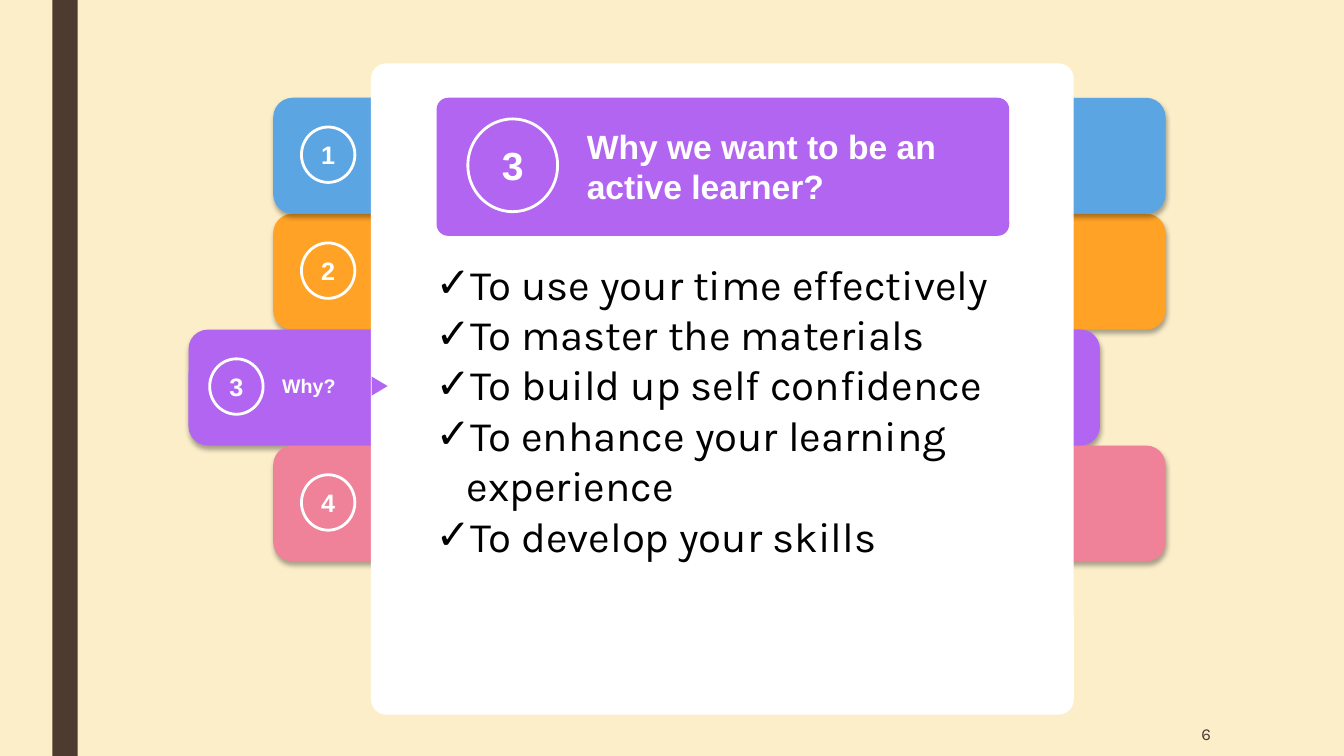
from lxml.etree import SubElement as Sub
from pptx import Presentation
from pptx.dml.color import RGBColor
from pptx.enum.shapes import MSO_SHAPE as Kind
from pptx.enum.text import MSO_ANCHOR as Anchor, MSO_AUTO_SIZE as Auto, PP_ALIGN as Align
from pptx.oxml.ns import qn
from pptx.util import Inches, Pt

BROWN, CREAM, WHITE, BLACK, PURPLE = "4E3B30", "FBEEC9", "FFFFFF", "000000", "B265F1"
TITLE = "Why we want to be an active learner?"
REASONS = [
    "To use your time effectively",
    "To master the materials",
    "To build up self confidence",
    "To enhance your learning experience",
    "To develop your skills",
]
# number: (left, width, badge left, colour), from back to front
TABS = {
    2: (2.71, 8.85, 2.99, "FFA225"),
    3: (1.87, 9.04, 2.08, PURPLE),
    4: (2.71, 8.85, 2.99, "EF8199"),
    1: (2.71, 8.85, 2.99, "5BA5E3"),
}
TOP, STEP = 0.97, 1.15
LABEL = {"name": "Arial", "bold": True}


def color(code):
    return RGBColor.from_string(code)


def place(shape, box):
    for side, size in zip(("left", "top", "width", "height"), box):
        setattr(shape, side, Inches(size))


def draw(kind, box, fill=None, line=None, adjust=None):
    shape = slide.shapes.add_shape(kind, *map(Inches, box))
    shape.shadow.inherit = False
    if fill:
        shape.fill.solid()
        shape.fill.fore_color.rgb = color(fill)
    else:
        shape.fill.background()
    if line:
        shape.line.color.rgb = color(line)
        shape.line.width = Pt(2)
    else:
        shape.line.fill.background()
    if adjust:
        shape.adjustments[0] = adjust
    return shape


def cast(shape):
    """Give a shape a soft shadow straight below it."""
    effects = shape.element.spPr.find(qn("a:effectLst"))
    outer = Sub(effects, qn("a:outerShdw"), blurRad=str(Pt(3.5)), dist=str(Pt(2.2)),
                dir="5400000", algn="t", rotWithShape="0")
    tint = Sub(outer, qn("a:srgbClr"), val=BLACK)
    Sub(tint, qn("a:alpha"), val="32000")


def write(shape, lines, size, ink, align=Align.LEFT, mark=None, **style):
    frame = shape.text_frame
    frame.word_wrap = True
    frame.auto_size = Auto.NONE
    frame.vertical_anchor = Anchor.MIDDLE
    frame.text = "\n".join(lines)
    for para in frame.paragraphs:
        if mark:
            add_mark(para, mark)
        para.alignment = align
        para.space_before = Pt(0)
        font = para.runs[0].font
        font.size = Pt(size)
        font.color.rgb = color(ink)
        for key, value in style.items():
            setattr(font, key, value)


def add_mark(para, mark):
    props = para._p.get_or_add_pPr()
    props.set("marL", str(Inches(0.31)))
    props.set("indent", str(Inches(-0.31)))
    Sub(Sub(props, qn("a:buClr")), qn("a:srgbClr"), val=BLACK)
    Sub(props, qn("a:buFont"), typeface="Arial")
    Sub(props, qn("a:buChar"), char=mark)


def badge(number, box, size):
    ring = draw(Kind.OVAL, box, line=WHITE)
    write(ring, [str(number)], size, WHITE, Align.CENTER, **LABEL)


def note(box, text, *look, **style):
    shape = slide.shapes.add_textbox(*map(Inches, box))
    write(shape, [text], *look, **style)


def lift(shape, box):
    """Place a placeholder and bring it to the front."""
    place(shape, box)
    shape.element.getparent().append(shape.element)


deck = Presentation()
deck.slide_width, deck.slide_height = Inches(13.33), Inches(7.5)
slide = deck.slides.add_slide(deck.slide_layouts[1])
slide.background.fill.solid()
slide.background.fill.fore_color.rgb = color(CREAM)

draw(Kind.RECTANGLE, (0.52, 0, 0.25, 7.5), BROWN)
for number, (left, width, ring, fill) in TABS.items():
    top = TOP + (number - 1) * STEP
    cast(draw(Kind.ROUNDED_RECTANGLE, (left, top, width, STEP), fill, adjust=0.167))
for number, (left, width, ring, fill) in TABS.items():
    top = TOP + (number - 1) * STEP
    badge(number, (ring, top + 0.29, 0.53, 0.55), 18)
note((2.7, 3.63, 0.92, 0.4), "Why?", 14, WHITE, **LABEL)

draw(Kind.ROUNDED_RECTANGLE, (3.68, 0.63, 6.97, 6.46), WHITE, adjust=0.023)
draw(Kind.ROUNDED_RECTANGLE, (4.33, TOP, 5.68, 1.37), PURPLE, adjust=0.084)
badge(3, (4.64, 1.18, 0.89, 0.92), 28)
pointer = draw(Kind.ISOSCELES_TRIANGLE, (3.67, 3.75, 0.19, 0.16), PURPLE)
pointer.rotation = 90

title, body = slide.placeholders
lift(title, (5.72, 1.11, 4.05, 1.08))
write(title, [TITLE], 24, WHITE, **LABEL)
lift(body, (4.22, 2.41, 5.92, 3.3))
write(body, REASONS, 30, BLACK, mark="✓", name="Karla")
note((10.36, 7.06, 1.75, 0.44), "6", 12, BROWN, Align.RIGHT, name="Karla")

deck.save("out.pptx")
